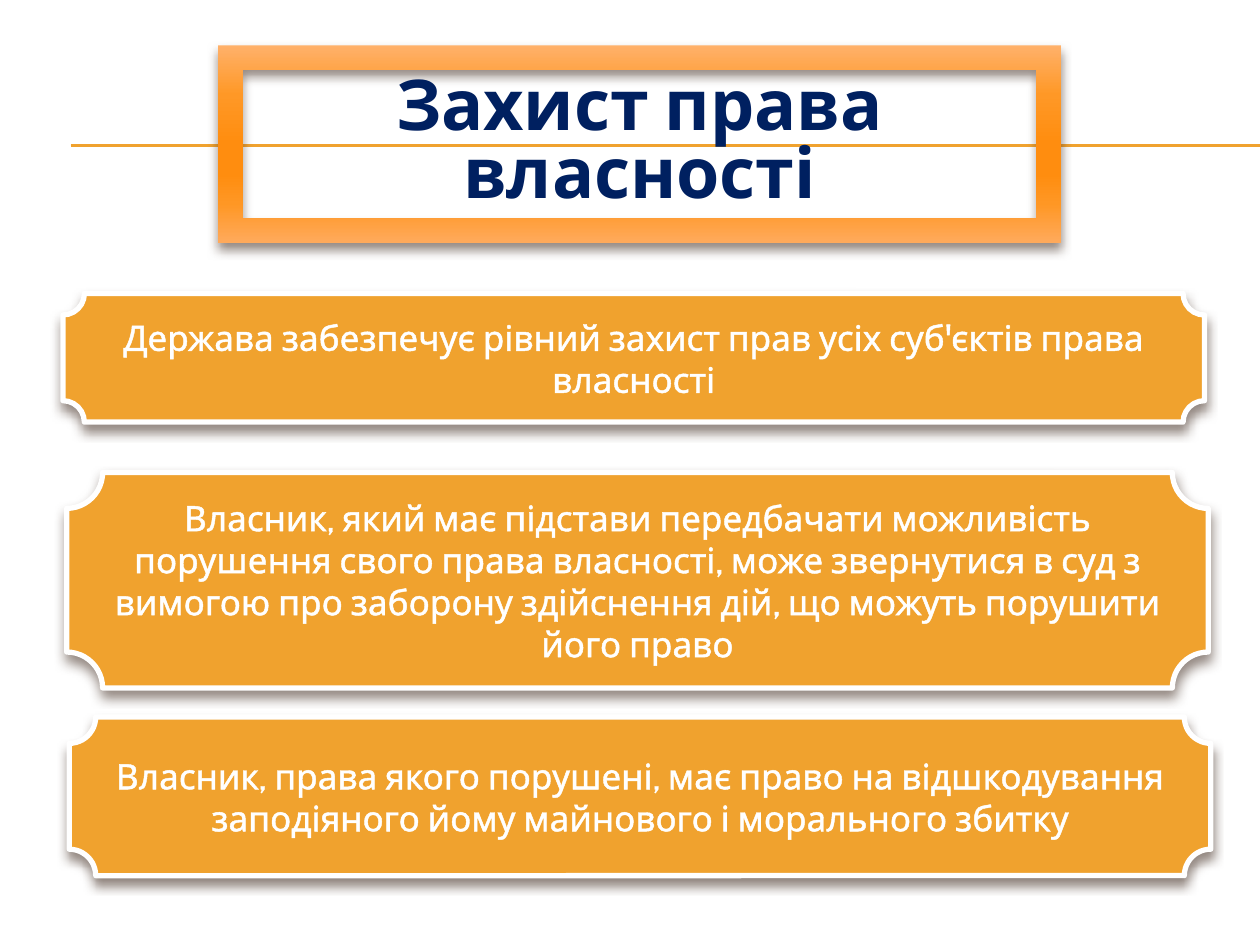
"""Builds a slide on the protection of property rights."""
from lxml.etree import SubElement
from pptx import Presentation
from pptx.dml.color import RGBColor
from pptx.enum.shapes import MSO_CONNECTOR, MSO_SHAPE
from pptx.enum.text import MSO_ANCHOR, PP_ALIGN
from pptx.oxml import parse_xml
from pptx.oxml.ns import nsdecls, qn
from pptx.util import Inches, Pt

AMBER = RGBColor(0xF0, 0xA2, 0x2E)
NAVY = RGBColor(0x00, 0x20, 0x60)
WHITE = RGBColor(0xFF, 0xFF, 0xFF)
BROWN = RGBColor(0x4E, 0x3B, 0x30)
FRAME_STOPS = [
    (0, RGBColor(0xFF, 0xB1, 0x6A)),
    (25, RGBColor(0xFF, 0x98, 0x26)),
    (50, RGBColor(0xFF, 0x8D, 0x0F)),
    (65, RGBColor(0xFF, 0x8D, 0x0F)),
    (80, RGBColor(0xFF, 0x97, 0x24)),
    (100, RGBColor(0xFF, 0xAA, 0x5C)),
]
FONT = "Cabin"
TITLE = "Захист права власності"
TITLE_BOX = (1.73, 0.36, 6.69, 1.57)
FRAME_RATIO = 0.125
RULE_LEFT, RULE_RIGHT, RULE_TOPS = 0.56, 10, (1.15, 1.16)
PLAQUE_WIDTH = 9.06
PLAQUES = [
    (0.5, 2.33, 1.02, "Держава забезпечує рівний захист прав усіх суб'єктів права власності"),
    (0.53, 3.75, 1.71, "Власник, який має підстави передбачати можливість порушення свого права "
                       "власності, може звернутися в суд з вимогою про заборону здійснення дій, "
                       "що можуть порушити його право"),
    (0.55, 5.69, 1.26, "Власник, права якого порушені, має право на відшкодування заподіяного "
                       "йому майнового і морального збитку"),
]


def add_rule(s, y):
    line = s.shapes.add_connector(MSO_CONNECTOR.STRAIGHT, Inches(RULE_LEFT), Inches(y),
                                  Inches(RULE_RIGHT), Inches(y))
    line.line.color.rgb = AMBER
    line.line.width = Pt(0.75)
    SubElement(line._element.spPr, qn("a:effectLst"))


def add_shadow(sp):
    sp.shadow.inherit = False
    effects = sp._element.spPr.find(qn("a:effectLst"))
    effects.append(parse_xml(
        f'<a:outerShdw {nsdecls("a")} blurRad="{Pt(6)}" dist="{Pt(4)}" dir="5400000" '
        f'algn="ctr" rotWithShape="0"><a:srgbClr val="{BROWN}"><a:alpha val="60000"/>'
        '</a:srgbClr></a:outerShdw>'))


def fill_gradient(sp, stops):
    sp.fill.gradient()
    sp.fill.gradient_angle = 270
    gs_list = sp._element.spPr.find(qn("a:gradFill")).find(qn("a:gsLst"))
    for gs in list(gs_list):
        gs_list.remove(gs)
    for pos, color in stops:
        gs = SubElement(gs_list, qn("a:gs"), pos=str(pos * 1000))
        SubElement(gs, qn("a:srgbClr"), val=str(color))


def add_shape(s, kind, left, top, width, height):
    return s.shapes.add_shape(kind, Inches(left), Inches(top), Inches(width), Inches(height))


def write(sp, text, size, color, bold=False, outline=None, spacing=None, margin=0.05):
    tf = sp.text_frame
    tf.word_wrap = True
    tf.vertical_anchor = MSO_ANCHOR.MIDDLE
    tf.margin_top = tf.margin_bottom = Inches(margin)
    p = tf.paragraphs[0]
    p.alignment = PP_ALIGN.CENTER
    p.line_spacing = spacing
    r = p.add_run()
    r.text = text
    r.font.name = FONT
    r.font.size = Pt(size)
    r.font.bold = bold
    r.font.color.rgb = color
    if outline:
        r._r.get_or_add_rPr().insert(0, parse_xml(
            f'<a:ln {nsdecls("a")} w="{Pt(outline)}"><a:solidFill>'
            f'<a:srgbClr val="{color}"/></a:solidFill></a:ln>'))


def add_title(s):
    frame = add_shape(s, MSO_SHAPE.FRAME, *TITLE_BOX)
    frame.adjustments[0] = FRAME_RATIO
    fill_gradient(frame, FRAME_STOPS)
    frame.line.fill.background()
    add_shadow(frame)

    left, top, width, height = TITLE_BOX
    border = FRAME_RATIO * height
    title = s.shapes.add_textbox(Inches(left + border), Inches(top + border),
                                 Inches(width - 2 * border), Inches(height - 2 * border))
    write(title, TITLE, size=40, color=NAVY, bold=True, spacing=0.8, margin=0)


def main():
    prs = Presentation()
    prs.slide_width, prs.slide_height = Inches(10), Inches(7.5)
    s = prs.slides.add_slide(prs.slide_layouts[6])

    for y in RULE_TOPS:
        add_rule(s, y)
    add_title(s)

    for left, top, height, text in PLAQUES:
        plaque = add_shape(s, MSO_SHAPE.PLAQUE, left, top, PLAQUE_WIDTH, height)
        plaque.fill.solid()
        plaque.fill.fore_color.rgb = AMBER
        plaque.line.color.rgb = WHITE
        plaque.line.width = Pt(3)
        add_shadow(plaque)
        write(plaque, text, size=20, color=WHITE, outline=1.45)

    prs.save("out.pptx")


if __name__ == "__main__":
    main()
